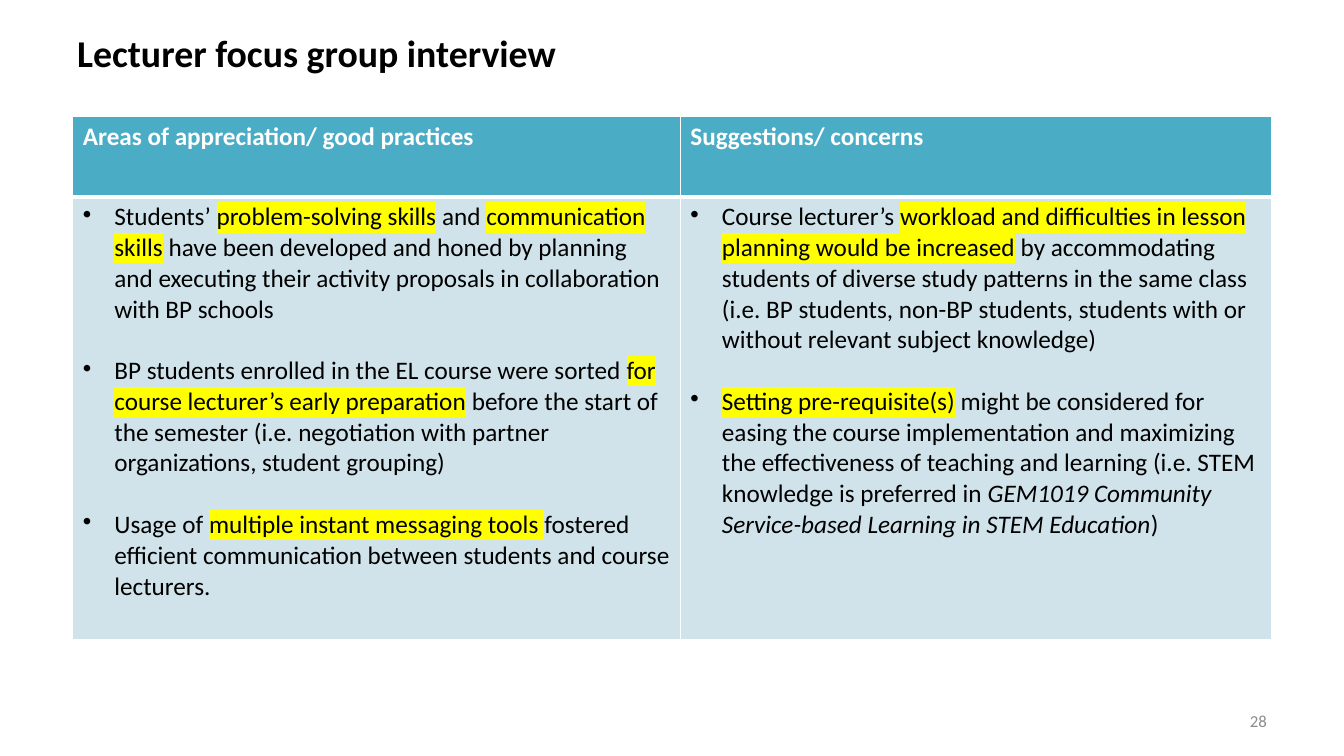
"""Build the slide on the lecturer focus group interview."""
import pptx
import pptx.dml.color
import pptx.enum.text
import pptx.oxml
import pptx.oxml.ns
import pptx.util

Pt = pptx.util.Pt
Color = pptx.dml.color.RGBColor
Align = pptx.enum.text.PP_ALIGN
Anchor = pptx.enum.text.MSO_ANCHOR
NS = pptx.oxml.ns.nsdecls("a")

BLACK = Color(0x00, 0x00, 0x00)
WHITE = Color(0xFF, 0xFF, 0xFF)
GREY = Color(0x8C, 0x8C, 0x8C)
TEAL = Color(0x4B, 0xAC, 0xC6)
PALE = Color(0xD0, 0xE3, 0xEA)
YELLOW = Color(0xFF, 0xFF, 0x00)

TITLE = {"size": Pt(27), "bold": True, "color": BLACK}
NUMBER = {"size": Pt(12), "bold": False, "color": GREY}
HEAD = {"size": Pt(18), "bold": True, "color": WHITE}
BODY = {"size": Pt(18), "bold": False, "color": BLACK}
MARK = BODY | {"mark": YELLOW}
SLANT = BODY | {"italic": True}


def add_run(para, text, style):
    run = para.add_run()
    run.text = text
    run.font.name = "Calibri"
    for key, value in style.items():
        if key == "color":
            run.font.color.rgb = value
        elif key == "mark":
            fill = run.font._element.find(pptx.oxml.ns.qn("a:solidFill"))
            fill.addnext(pptx.oxml.parse_xml(
                f'<a:highlight {NS}><a:srgbClr val="{value}"/></a:highlight>'))
        else:
            setattr(run.font, key, value)


def style_cell(cell, fill, edges):
    cell.fill.solid()
    cell.fill.fore_color.rgb = fill
    props = cell._tc.get_or_add_tcPr()
    for spot, (side, width) in enumerate(edges.items()):
        props.insert(spot, pptx.oxml.parse_xml(
            f'<a:ln{side} {NS} w="{Pt(width)}"><a:solidFill>'
            f'<a:srgbClr val="{WHITE}"/></a:solidFill></a:ln{side}>'))


deck = pptx.Presentation()
deck.slide_width, deck.slide_height = Pt(960), Pt(540)
slide = deck.slides.add_slide(deck.slide_layouts[6])

labels = [
    ("Lecturer focus group interview", TITLE, Align.LEFT, (48, 3, 864, 69)),
    ("28", NUMBER, Align.RIGHT, (688, 500.4, 224, 28.8)),
]
for text, style, align, place in labels:
    frame = slide.shapes.add_textbox(*map(Pt, place)).text_frame
    frame.word_wrap = True
    frame.vertical_anchor = Anchor.MIDDLE
    frame.paragraphs[0].alignment = align
    add_run(frame.paragraphs[0], text, style)

columns = [
    ("Areas of appreciation/ good practices", 434, [
        [("Students’ ", BODY), ("problem-solving skills", MARK), (" and ", BODY),
         ("communication skills", MARK),
         (" have been developed and honed by planning and executing their activity "
          "proposals in collaboration with BP schools", BODY)],
        [("BP students enrolled in the EL course were sorted ", BODY),
         ("for course lecturer’s early preparation", MARK),
         (" before the start of the semester (i.e. negotiation with partner "
          "organizations, student grouping)", BODY)],
        [("Usage of ", BODY), ("multiple instant messaging tools ", MARK),
         ("fostered efficient communication between students and course lecturers.",
          BODY)],
    ]),
    ("Suggestions/ concerns", 422, [
        [("Course lecturer’s ", BODY),
         ("workload and difficulties in lesson planning would be increased", MARK),
         (" by accommodating students of diverse study patterns in the same class "
          "(i.e. BP students, non-BP students, students with or without relevant "
          "subject knowledge)", BODY)],
        [("Setting pre-requisite(s)", MARK),
         (" might be considered for easing the course implementation and maximizing "
          "the effectiveness of teaching and learning (i.e. STEM knowledge is "
          "preferred in ", BODY),
         ("GEM1019 Community Service-based Learning in STEM Education", SLANT),
         (")", BODY)],
    ]),
]
table = slide.shapes.add_table(2, 2, Pt(52), Pt(83), Pt(856), Pt(374)).table
table.rows[0].height, table.rows[1].height = Pt(57.6), Pt(316.4)

for col, (title, width, points) in enumerate(columns):
    table.columns[col].width = Pt(width)
    head, body = table.cell(0, col), table.cell(1, col)
    style_cell(head, TEAL, {"L": 1, "R": 1, "T": 1, "B": 3})
    style_cell(body, PALE, {"L": 1, "R": 1, "T": 3, "B": 1})
    add_run(head.text_frame.paragraphs[0], title, HEAD)
    frame = body.text_frame
    for rank, runs in enumerate(points):
        para = frame.add_paragraph() if rank else frame.paragraphs[0]
        props = para._p.get_or_add_pPr()
        props.set("marL", str(Pt(22.5)))
        props.set("indent", str(-Pt(22.5)))
        props.append(pptx.oxml.parse_xml(f'<a:buChar {NS} char="•"/>'))
        para.space_before = Pt(22 if rank else 0)
        for text, style in runs:
            add_run(para, text, style)

deck.save("out.pptx")
